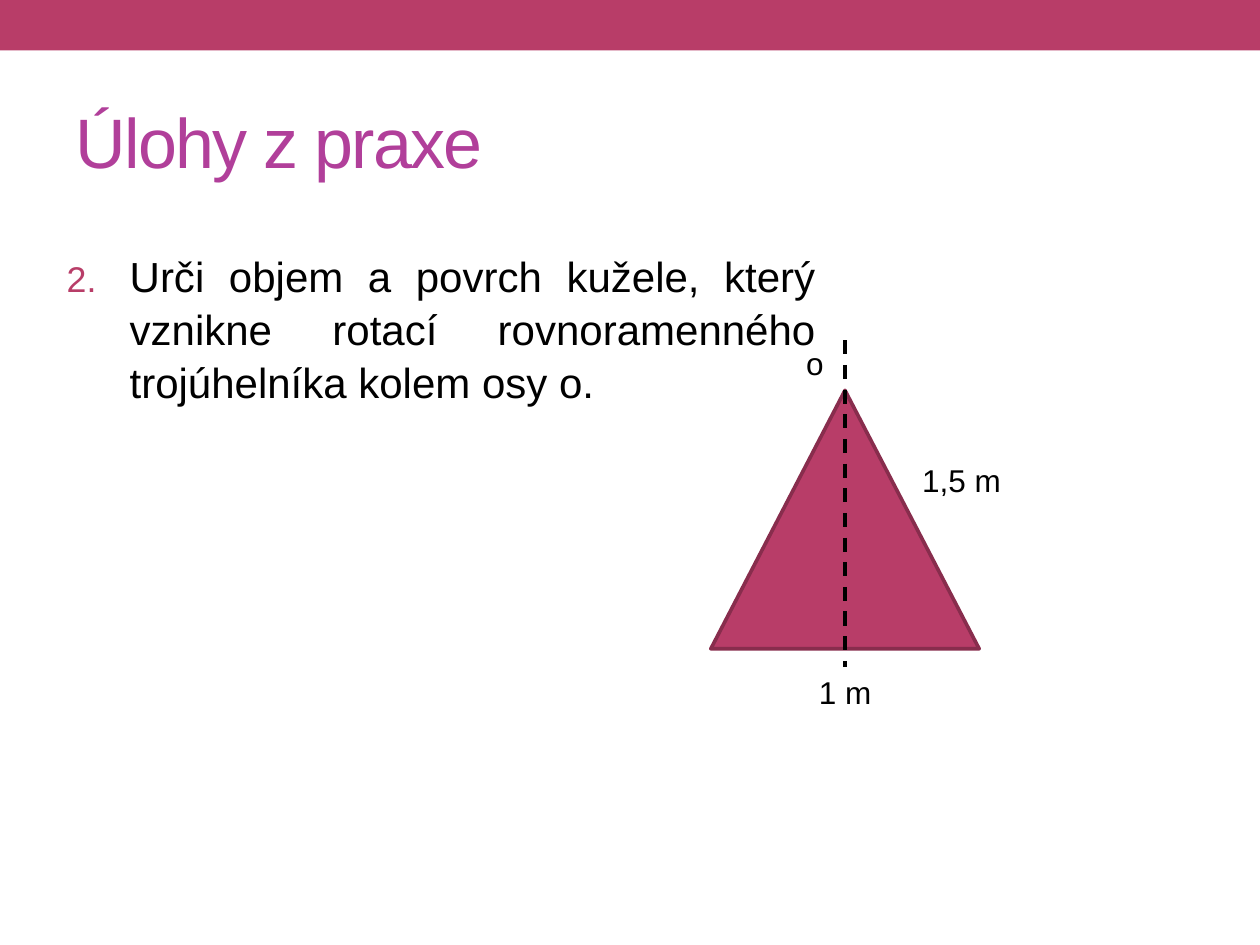
from lxml import etree
from pptx import Presentation
from pptx.dml.color import RGBColor
from pptx.enum.dml import MSO_LINE
from pptx.enum.shapes import MSO_CONNECTOR, MSO_SHAPE
from pptx.enum.text import MSO_ANCHOR, PP_ALIGN
from pptx.oxml.ns import qn
from pptx.util import Cm, Pt

RECTANGLE, TRIANGLE = MSO_SHAPE.RECTANGLE, MSO_SHAPE.ISOSCELES_TRIANGLE
STRAIGHT, DASH = MSO_CONNECTOR.STRAIGHT, MSO_LINE.DASH
LEFT, JUSTIFY = PP_ALIGN.LEFT, PP_ALIGN.JUSTIFY
TOP, MIDDLE = MSO_ANCHOR.TOP, MSO_ANCHOR.MIDDLE

ROSE = RGBColor(0xB8, 0x3D, 0x68)
DARK_ROSE = RGBColor(0x88, 0x2D, 0x4D)
PURPLE = RGBColor(0xB1, 0x3F, 0x9A)
BLACK = RGBColor(0, 0, 0)
FONT = "Arial"

# Content; places are left, top, width, height in cm
TITLE = "Úlohy z praxe"
TASK = ("Urči objem a povrch kužele, který vznikne rotací "
        "rovnoramenného trojúhelníka kolem osy o.")
TASK_NUMBER = 2
CONE_SECTION = (14.33, 7.87, 5.41, 5.21)
AXIS_TOP, AXIS_BOTTOM = 6.86, 13.44
LABELS = [
    ("o", (16, 6.81, 0.99, 1.02)),
    ("1 m", (16.26, 13.44, 1.91, 1.02)),
    ("1,5 m", (18.34, 9.17, 2.74, 1.02)),
]


def lengths(place):
    return [Cm(value) for value in place]


def move(shape, place):
    shape.left, shape.top, shape.width, shape.height = lengths(place)


def write(box, text, size, color, align=LEFT, anchor=TOP):
    frame = box.text_frame
    frame.word_wrap = True
    frame.vertical_anchor = anchor
    para = frame.paragraphs[0]
    para.alignment = align
    span = para.add_run()
    span.text = text
    span.font.name = FONT
    span.font.size = Pt(size)
    span.font.color.rgb = color
    return para, span


def add_filled(shapes, kind, place, color):
    shape = shapes.add_shape(kind, *lengths(place))
    shape.shadow.inherit = False
    shape.fill.solid()
    shape.fill.fore_color.rgb = color
    shape.line.fill.background()
    return shape


def number_paragraph(para, start, color):
    properties = para._p.get_or_add_pPr()
    properties.set("marL", str(Cm(1.27)))
    properties.set("indent", str(-Cm(1.27)))
    bullet_color = etree.SubElement(properties, qn("a:buClr"))
    etree.SubElement(bullet_color, qn("a:srgbClr"), val=str(color))
    etree.SubElement(properties, qn("a:buSzPct"), val="85000")
    etree.SubElement(properties, qn("a:buFont"), typeface=FONT)
    etree.SubElement(properties, qn("a:buAutoNum"), type="arabicPeriod",
                     startAt=str(start))


deck = Presentation()
deck.slide_width, deck.slide_height = Cm(25.4), Cm(19.05)
page = deck.slides.add_slide(deck.slide_layouts[1])

# Top band
add_filled(page.shapes, RECTANGLE, (0, 0, 25.4, 1.02), ROSE)

# Title
title = page.shapes.title
move(title, (1.27, 1.47, 22.86, 2.74))
para, span = write(title, TITLE, 40, PURPLE, anchor=MIDDLE)
span.font._element.set("spc", "-100")

# Numbered task
body = page.placeholders[1]
move(body, (1.09, 4.88, 15.6, 5.74))
para, span = write(body, TASK, 24, BLACK, JUSTIFY)
para.line_spacing = 1.05
para.space_before = Pt(4.8)
number_paragraph(para, TASK_NUMBER, ROSE)

# Triangle with its axis of rotation
figure = page.shapes.add_group_shape()
triangle = add_filled(figure.shapes, TRIANGLE, CONE_SECTION, ROSE)
triangle.line.color.rgb = DARK_ROSE
triangle.line.width = Pt(2.08)

axis_x = CONE_SECTION[0] + CONE_SECTION[2] / 2
axis = figure.shapes.add_connector(
    STRAIGHT, *lengths((axis_x, AXIS_TOP, axis_x, AXIS_BOTTOM)))
axis.line.color.rgb = BLACK
axis.line.width = Pt(2)
axis.line.dash_style = DASH
etree.SubElement(axis._element.spPr, qn("a:effectLst"))

# Labels of the axis and sides
for text, place in LABELS:
    label = figure.shapes.add_textbox(*lengths(place))
    write(label, text, 18, BLACK)

deck.save("out.pptx")
